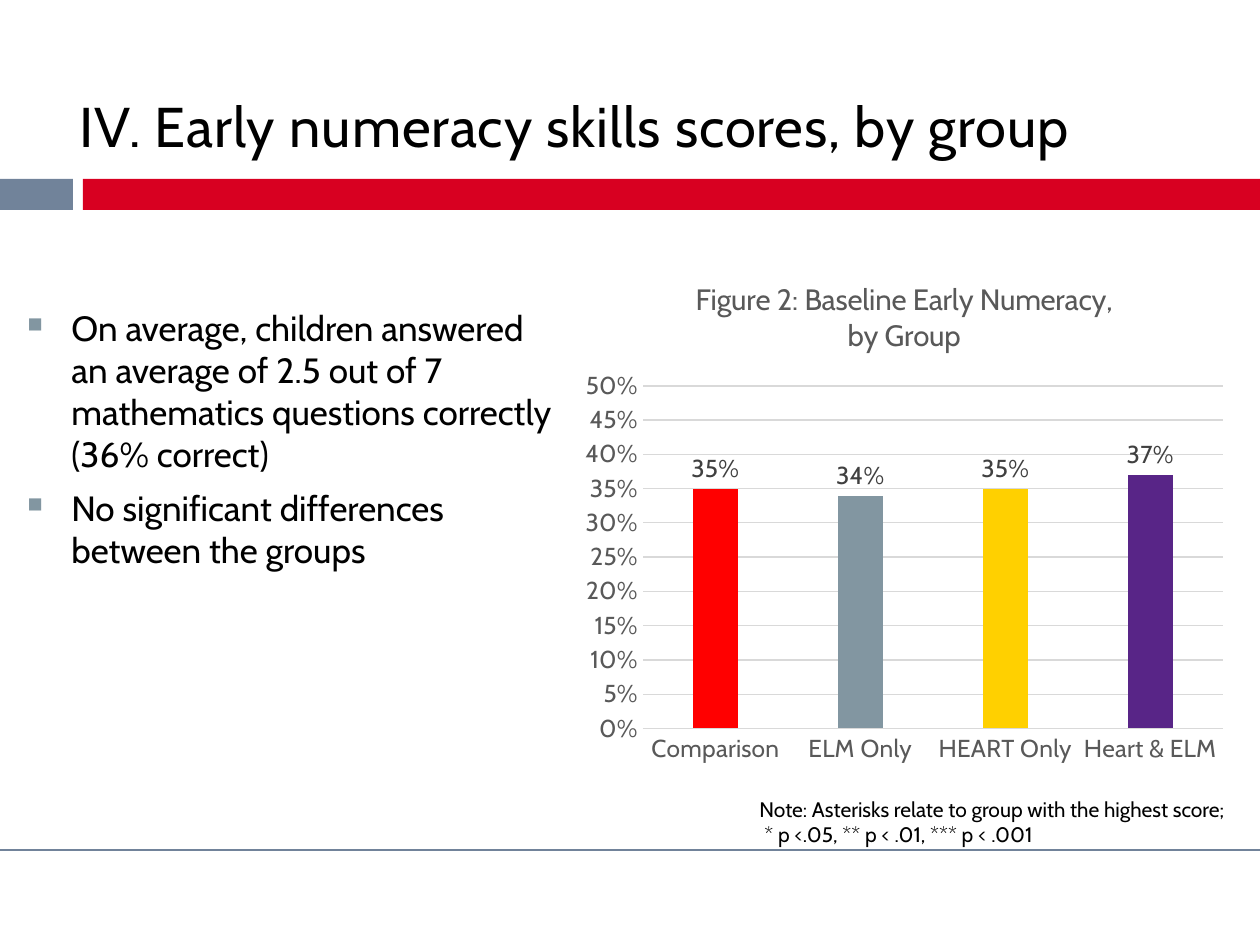
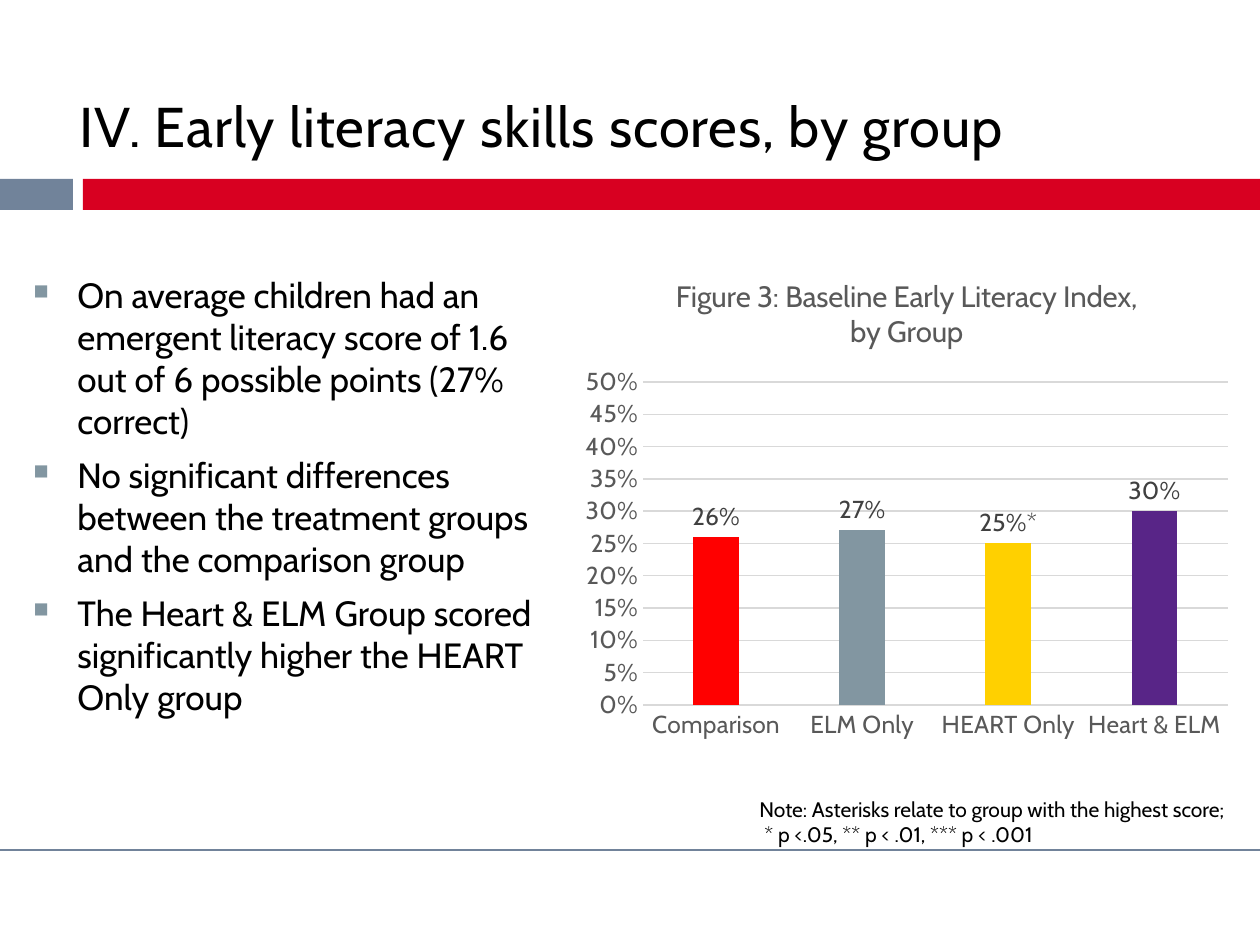
from lxml import etree
from pptx import Presentation
from pptx.chart.data import CategoryChartData
from pptx.dml.color import RGBColor
from pptx.enum.chart import XL_CHART_TYPE as ChartType
from pptx.enum.chart import XL_LABEL_POSITION as LabelPosition
from pptx.enum.chart import XL_TICK_MARK as TickMark
from pptx.enum.shapes import MSO_CONNECTOR as Connector
from pptx.enum.shapes import MSO_SHAPE as Shape
from pptx.enum.text import MSO_ANCHOR as Anchor
from pptx.oxml.ns import qn
from pptx.util import Pt

EMU_PER_PX = 914400 / 126
SLIDE_WIDTH, SLIDE_HEIGHT = 1260, 945

BLACK = RGBColor(0x00, 0x00, 0x00)
SLATE = RGBColor(0x71, 0x83, 0x9A)
CRIMSON = RGBColor(0xD8, 0x00, 0x21)
RED = RGBColor(0xFF, 0x00, 0x00)
STEEL = RGBColor(0x82, 0x96, 0xA1)
YELLOW = RGBColor(0xFF, 0xD0, 0x00)
PURPLE = RGBColor(0x58, 0x25, 0x87)
AXIS_TEXT = RGBColor(0x59, 0x59, 0x59)
LABEL_TEXT = RGBColor(0x40, 0x40, 0x40)
GRID = RGBColor(0xD9, 0xD9, 0xD9)

GROUPS = {"Comparison": RED, "ELM Only": STEEL, "HEART Only": YELLOW, "Heart & ELM": PURPLE}
NOTE = ("Note: Asterisks relate to group with the highest score;",
        "* p <.05, ** p < .01, *** p < .001")

SLIDES = [
    dict(
        title="IV. Early numeracy skills scores, by group",
        bullets=["On average, children answered an average of 2.5 out of 7 "
                 "mathematics questions correctly (36% correct)",
                 "No significant differences between the groups"],
        bullet_box=(15, 300, 557, 455),
        chart_title=("Figure 2: Baseline Early Numeracy,", "by Group"),
        chart_box=(572, 260, 664, 514),
        scores=(0.35, 0.34, 0.35, 0.37),
        starred={},
    ),
    dict(
        title="IV. Early literacy skills scores, by group",
        bullets=["On average children had an emergent literacy score of 1.6 "
                 "out of 6 possible points (27% correct)",
                 "No significant differences between the treatment groups "
                 "and the comparison group",
                 "The Heart & ELM Group scored significantly higher the "
                 "HEART Only group"],
        bullet_box=(21, 267, 552, 523),
        chart_title=("Figure 3: Baseline Early Literacy Index,", "by Group"),
        chart_box=(572, 257, 669, 493),
        scores=(0.26, 0.27, 0.25, 0.30),
        starred={2: "25%*"},
    ),
]


def emu(px):
    return round(px * EMU_PER_PX)


def style_font(font, size, color):
    font.name = "Cabin"
    font.size = Pt(size)
    font.color.rgb = color
    font.bold = False


def write(para, text, size=20, color=BLACK, indent=0, hanging=0, spacing=0, bullet=None):
    """Fill a paragraph; indent and hanging are px, spacing is in points."""
    properties = para._p.get_or_add_pPr()
    if indent:
        properties.set("marL", str(emu(indent)))
        properties.set("indent", str(emu(-hanging)))
    if bullet:
        tint = etree.SubElement(properties, qn("a:buClr"))
        etree.SubElement(tint, qn("a:srgbClr"), val=str(STEEL))
        etree.SubElement(properties, qn("a:buSzPct"), val="60000")
        etree.SubElement(properties, qn("a:buChar"), char=bullet)
    span = para.add_run()
    span.text = text
    style_font(span.font, size, color)
    if spacing:
        span._r.get_or_add_rPr().set("spc", str(round(spacing * 100)))


def paragraphs(frame, count):
    """Return the first paragraph of a frame and as many new ones as needed."""
    return [frame.paragraphs[0]] + [frame.add_paragraph() for _ in range(count - 1)]


class Deck:
    def __init__(self):
        self.file = Presentation()
        self.file.slide_width = emu(SLIDE_WIDTH)
        self.file.slide_height = emu(SLIDE_HEIGHT)
        self.page = None

    def new_page(self):
        self.page = self.file.slides.add_slide(self.file.slide_layouts[6])
        self.band(0, 73, SLATE)
        self.band(83, SLIDE_WIDTH - 83, CRIMSON)
        self.rule(850)

    def band(self, left, width, color):
        box = self.page.shapes.add_shape(
            Shape.RECTANGLE, emu(left), emu(179), emu(width), emu(31))
        box.shadow.inherit = False
        box.fill.solid()
        box.fill.fore_color.rgb = color
        box.line.fill.background()

    def rule(self, top):
        line = self.page.shapes.add_connector(
            Connector.STRAIGHT, 0, emu(top), emu(SLIDE_WIDTH), emu(top))
        line.line.color.rgb = SLATE
        line.line.width = Pt(1)
        etree.SubElement(line._element.spPr, qn("a:effectLst"))

    def text_frame(self, *bounds, anchor=Anchor.TOP):
        frame = self.page.shapes.add_textbox(*map(emu, bounds)).text_frame
        frame.word_wrap = True
        frame.vertical_anchor = anchor
        return frame

    def title(self, text):
        frame = self.text_frame(67, 52, 1113, 113, anchor=Anchor.BOTTOM)
        write(frame.paragraphs[0], text, size=32, spacing=0.5)

    def bullets(self, texts, bounds):
        frame = self.text_frame(*bounds)
        for index, (para, text) in enumerate(zip(paragraphs(frame, len(texts)), texts)):
            write(para, text, indent=44, hanging=44, bullet="■")
            if index:
                para.space_before = Pt(7)

    def note(self):
        first, second = paragraphs(self.text_frame(747, 790, 513, 63), 2)
        write(first, NOTE[0], size=12)
        write(second, NOTE[1], size=12, indent=5)

    def score_chart(self, title, bounds, scores, starred):
        data = CategoryChartData(number_format="0%")
        data.categories = GROUPS
        data.add_series("Series 1", scores)
        chart = self.page.shapes.add_chart(
            ChartType.COLUMN_CLUSTERED, *map(emu, bounds), data).chart
        style_font(chart.font, 14, BLACK)
        chart.has_legend = False
        heading = chart.chart_title
        for para, text in zip(paragraphs(heading.text_frame, len(title)), title):
            write(para, text, size=16.8, color=AXIS_TEXT)
        heading.include_in_layout = False
        self.style_axes(chart)
        self.style_columns(chart.plots[0], starred)

    def style_axes(self, chart):
        for axis in (chart.category_axis, chart.value_axis):
            axis.major_tick_mark = axis.minor_tick_mark = TickMark.NONE
            style_font(axis.tick_labels.font, 14, AXIS_TEXT)
        scale = chart.value_axis
        scale.minimum_scale, scale.maximum_scale, scale.major_unit = 0, 0.5, 0.05
        scale.tick_labels.number_format = "0%"
        scale.tick_labels.number_format_is_linked = False
        scale.format.line.fill.background()
        for line in (chart.category_axis.format.line, scale.major_gridlines.format.line):
            line.color.rgb = GRID
            line.width = Pt(0.75)

    def style_columns(self, plot, starred):
        plot.gap_width, plot.overlap = 219, -27
        plot.vary_by_categories = False
        series = plot.series[0]
        for index, color in enumerate(GROUPS.values()):
            fill = series.points[index].format.fill
            fill.solid()
            fill.fore_color.rgb = color
        labels = series.data_labels
        labels.show_value = True
        labels.number_format = "0%"
        labels.number_format_is_linked = False
        labels.position = LabelPosition.OUTSIDE_END
        style_font(labels.font, 14, LABEL_TEXT)
        for index, text in starred.items():
            label = series.points[index].data_label
            write(label.text_frame.paragraphs[0], text, size=14, color=LABEL_TEXT)
            label.position = LabelPosition.OUTSIDE_END


def main():
    deck = Deck()
    for content in SLIDES:
        deck.new_page()
        deck.bullets(content["bullets"], content["bullet_box"])
        deck.title(content["title"])
        deck.note()
        deck.score_chart(content["chart_title"], content["chart_box"],
                         content["scores"], content["starred"])
    deck.file.save("out.pptx")


if __name__ == "__main__":
    main()
